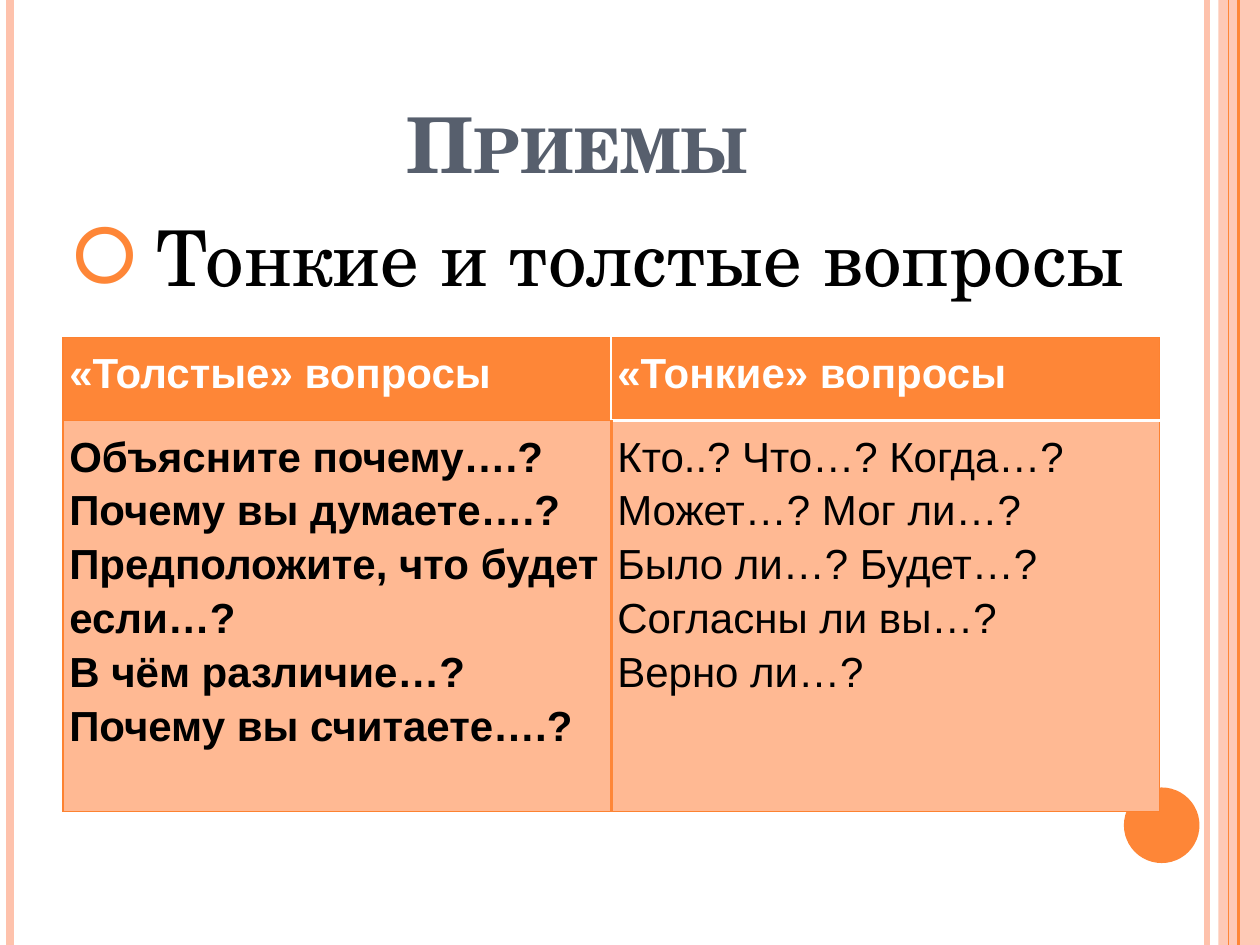
from lxml import etree
from pptx import Presentation
from pptx.dml.color import RGBColor
from pptx.enum.shapes import MSO_CONNECTOR, MSO_SHAPE
from pptx.enum.text import MSO_ANCHOR, MSO_AUTO_SIZE, PP_ALIGN
from pptx.oxml.ns import qn
from pptx.util import Inches, Pt

STRAIGHT = MSO_CONNECTOR.STRAIGHT
RECTANGLE, OVAL = MSO_SHAPE.RECTANGLE, MSO_SHAPE.OVAL
BOTTOM, TOP = MSO_ANCHOR.BOTTOM, MSO_ANCHOR.TOP
CENTER, LEFT = PP_ALIGN.CENTER, PP_ALIGN.LEFT
NO_AUTOFIT = MSO_AUTO_SIZE.NONE

ORANGE = RGBColor(0xFE, 0x86, 0x37)
DARK_ORANGE = RGBColor(0xFD, 0x82, 0x31)
PEACH = RGBColor(0xFE, 0xC2, 0xAC)
CELL_PEACH = RGBColor(0xFF, 0xB9, 0x93)
SLATE = RGBColor(0x57, 0x5F, 0x6D)
BLACK = RGBColor(0, 0, 0)
WHITE = RGBColor(0xFF, 0xFF, 0xFF)
SERIF, SANS = "TeX Gyre Schola", "Arial"


def format_runs(para, color, **font_values):
    for span in para.runs:
        span.font.color.rgb = color
        for name, value in font_values.items():
            setattr(span.font, name, value)


def set_border(cell, side, color, width):
    """Add one cell border; borders go ahead of the fill in a:tcPr."""
    properties = cell._tc.get_or_add_tcPr()
    line = etree.Element(qn(f"a:ln{side}"), w=str(Pt(width)))
    fill = etree.SubElement(line, qn("a:solidFill"))
    etree.SubElement(fill, qn("a:srgbClr"), val=str(color))
    properties.insert(len(properties.findall("*")) - 1, line)


deck = Presentation()
deck.slide_width, deck.slide_height = Inches(10), Inches(7.5)
page = deck.slides.add_slide(deck.slide_layouts[1])
shapes = page.shapes

# Side stripes and the corner disc
band = shapes.add_shape(RECTANGLE, Inches(9.67), 0, Inches(0.33), Inches(7.5))
disc = shapes.add_shape(OVAL, Inches(8.92), Inches(6.25), Inches(0.6), Inches(0.6))
for shape, color in ((band, PEACH), (disc, ORANGE)):
    shape.shadow.inherit = False
    shape.fill.solid()
    shape.fill.fore_color.rgb = color
    shape.line.fill.background()
band_color = band.fill._xPr.find(qn("a:solidFill"))[0]
etree.SubElement(band_color, qn("a:alpha"), val="87000")

for x, color, width in (
    (9.58, PEACH, 3),
    (0.08, PEACH, 4.5),
    (9.83, PEACH, 1.5),
    (9.75, ORANGE, 0.75),
):
    stripe = shapes.add_connector(STRAIGHT, Inches(x), 0, Inches(x), Inches(7.5))
    stripe.line.color.rgb = ORANGE if x > 9.7 else color
    stripe.line.width = Pt(width)
    etree.SubElement(stripe._element.spPr, qn("a:effectLst"))

# Title and bullet, moved in front of the decoration
title, body = shapes.title, page.placeholders[1]
for box, text, place, anchor, align in (
    (title, "Приемы", (0.5, 0.3, 8.17, 1.25), BOTTOM, CENTER),
    (body, " Тонкие и толстые вопросы", (0.49, 1.61, 8.69, 1.5), TOP, LEFT),
):
    box.left, box.top, box.width, box.height = map(Inches, place)
    frame = box.text_frame
    frame.text = text
    frame.auto_size = NO_AUTOFIT
    frame.vertical_anchor = anchor
    frame.paragraphs[0].alignment = align
    shapes._spTree.append(box._element)

heading = title.text_frame.paragraphs[0]
format_runs(heading, SLATE, name=SERIF, size=Pt(44), bold=True)
heading.runs[0].font._element.set("cap", "small")

topic = body.text_frame.paragraphs[0]
topic.space_before = Pt(0)
format_runs(topic, BLACK, name=SERIF, size=Pt(44))
topic_properties = topic._p.get_or_add_pPr()
topic_properties.set("marL", str(Inches(0.3)))
topic_properties.set("indent", str(Inches(-0.3)))
bullet_color = etree.SubElement(topic_properties, qn("a:buClr"))
etree.SubElement(bullet_color, qn("a:srgbClr"), val=str(ORANGE))
etree.SubElement(topic_properties, qn("a:buChar"), char="🞆")

# Question table
THICK_QUESTIONS = """Объясните почему….?
Почему вы думаете….?
Предположите, что будет если…?
В чём различие…?
Почему вы считаете….?"""
THIN_QUESTIONS = """Кто..? Что…? Когда…?
Может…? Мог ли…?
Было ли…? Будет…?
Согласны ли вы…?
Верно ли…?"""
EDGE, RULE, DIVIDER = (DARK_ORANGE, 0.75), (WHITE, 2), (ORANGE, 2)

# text, text colour, bold, fill, borders by side
ROWS = (
    (
        ("«Толстые» вопросы", WHITE, True, ORANGE, {"L": EDGE, "T": EDGE, "B": EDGE}),
        ("«Тонкие» вопросы", WHITE, True, ORANGE, {"R": EDGE, "T": EDGE, "B": RULE}),
    ),
    (
        (THICK_QUESTIONS, BLACK, True, CELL_PEACH,
         {"L": EDGE, "R": DIVIDER, "T": EDGE, "B": EDGE}),
        (THIN_QUESTIONS, BLACK, False, CELL_PEACH,
         {"L": DIVIDER, "R": EDGE, "T": RULE, "B": EDGE}),
    ),
)

table = shapes.add_table(
    2, 2, Inches(0.5), Inches(2.68), Inches(8.7), Inches(3.76)
).table
for column in table.columns:
    column.width = Inches(4.35)
for row, height in zip(table.rows, (0.66, 3.1)):
    row.height = Inches(height)

for row, contents in zip(table.rows, ROWS):
    for cell, (text, color, bold, fill, borders) in zip(row.cells, contents):
        for side in ("left", "right", "top", "bottom"):
            setattr(cell, f"margin_{side}", Inches(0.05))
        cell.fill.solid()
        cell.fill.fore_color.rgb = fill
        for side, (border_color, width) in borders.items():
            set_border(cell, side, border_color, width)
        para = cell.text_frame.paragraphs[0]
        para.text = text
        para.line_spacing = 1.15
        para.space_after = Pt(6.8)
        format_runs(para, color, name=SANS, size=Pt(24), bold=bold)

deck.save("out.pptx")
